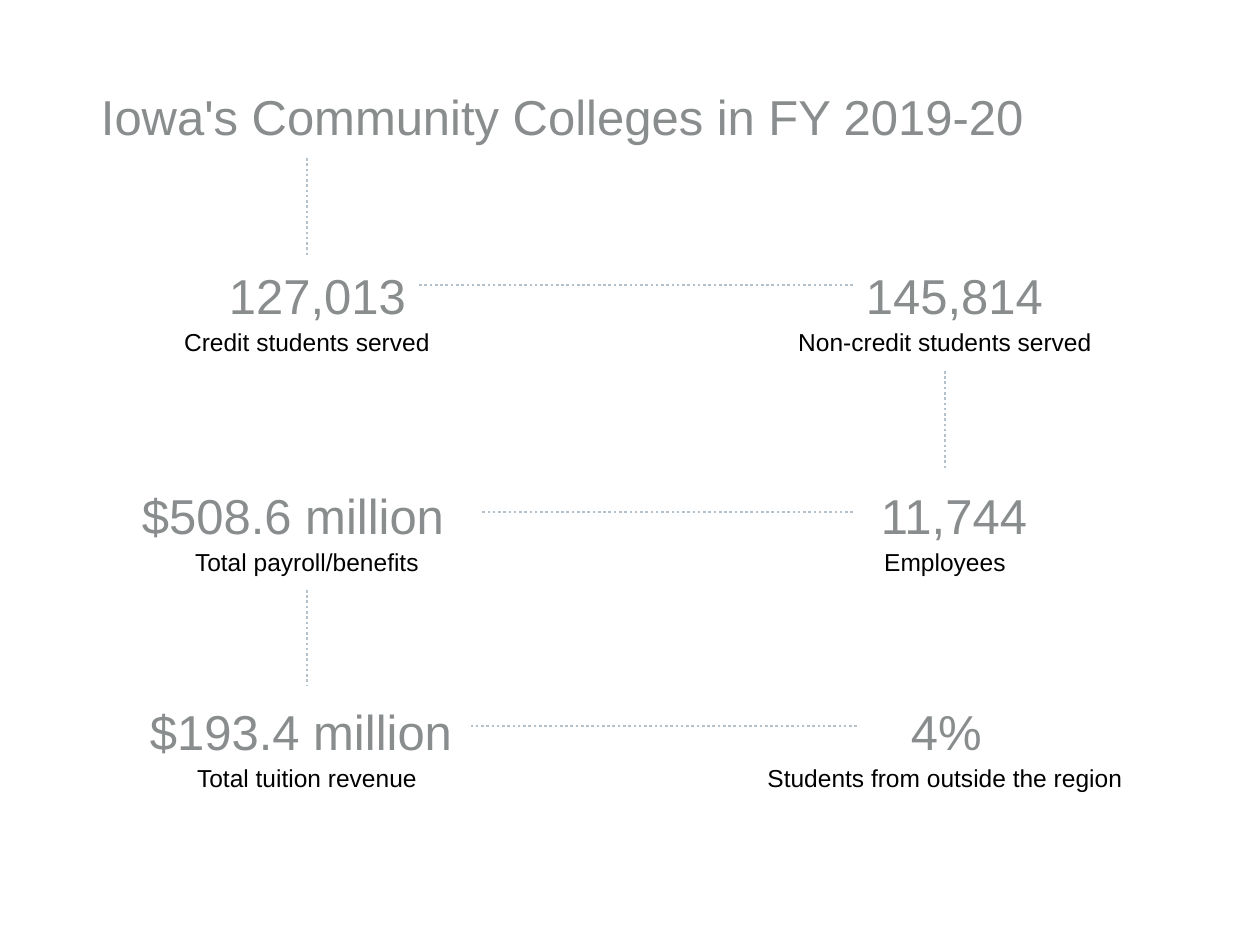
from lxml import etree
from pptx import Presentation
from pptx import util as u
from pptx.dml.color import RGBColor
from pptx.enum import dml, shapes, text
from pptx.oxml import ns

PX = u.Inches(1) / 126
LEFT_AXIS, RIGHT_AXIS = 307, 945
LABEL_DROP = 61

ROWS = [
    (260, 68, [("127,013", 229, 189, "Credit students served", 468),
               ("145,814", 866, 193, "Non-credit students served", 462)]),
    (480, 59, [("$508.6 million", 142, 365, "Total payroll/benefits", 392),
               ("11,744", 881, 161, "Employees", 316)]),
    (696, 72, [("$193.4 million", 150, 352, "Total tuition revenue", 404),
               ("4%", 911, 100, "Students from outside the region", 462)]),
]
LINKS = [
    (LEFT_AXIS, 158, LEFT_AXIS, 255),
    (853, 285, 417, 285),
    (RIGHT_AXIS, 371, RIGHT_AXIS, 468),
    (853, 512, 480, 512),
    (LEFT_AXIS, 590, LEFT_AXIS, 686),
    (857, 726, 469, 726),
]


def px(length):
    """Turn pixels into EMU."""
    return u.Emu(round(length * PX))


def color(hex_code):
    """Turn a hex string into a colour."""
    return RGBColor.from_string(hex_code)


def add_link(slide, x1, y1, x2, y2):
    """Draw a dotted line between two points."""
    link = slide.shapes.add_connector(
        shapes.MSO_CONNECTOR.STRAIGHT, px(x1), px(y1), px(x2), px(y2))
    link.line.color.rgb = color("B5C1CB")
    link.line.width = u.Pt(1.5)
    link.line.dash_style = dml.MSO_LINE.ROUND_DOT
    etree.SubElement(link._element.spPr, ns.qn("a:effectLst"))


def add_words(slide, box, words, size, hex_code, align):
    """Add one line of Arial text and return its frame."""
    frame = slide.shapes.add_textbox(*map(px, box)).text_frame
    frame.word_wrap = True
    paragraph = frame.paragraphs[0]
    paragraph.alignment = align
    run = paragraph.add_run()
    run.text = words
    run.font.name = "Arial"
    run.font.size = u.Pt(size)
    run.font.color.rgb = color(hex_code)
    return frame


def add_headline(slide, left, top, width, words):
    """Add large grey text that starts at the left edge of its box."""
    frame = add_words(slide, (left, top, width, 74), words, 28, "8A8D8E",
                      text.PP_ALIGN.LEFT)
    frame.margin_left = frame.margin_right = frame.margin_bottom = 0
    frame.margin_top = px(6)


def add_label(slide, axis, top, width, height, words):
    """Add a small black caption centred on its column axis."""
    add_words(slide, (axis - width / 2, top, width, height), words, 14,
              "000000", text.PP_ALIGN.CENTER)


def main():
    """Build the slide of college figures."""
    deck = Presentation()
    deck.slide_width, deck.slide_height = px(1260), px(945)
    slide = deck.slides.add_slide(deck.slide_layouts[6])
    for link in LINKS:
        add_link(slide, *link)
    add_headline(slide, 101, 81, 1043, "Iowa's Community Colleges in FY 2019-20")
    for top, label_height, figures in ROWS:
        for axis, figure in zip((LEFT_AXIS, RIGHT_AXIS), figures):
            value, left, width, label, label_width = figure
            add_headline(slide, left, top, width, value)
            add_label(slide, axis, top + LABEL_DROP, label_width,
                      label_height, label)
    deck.save("out.pptx")


if __name__ == "__main__":
    main()
